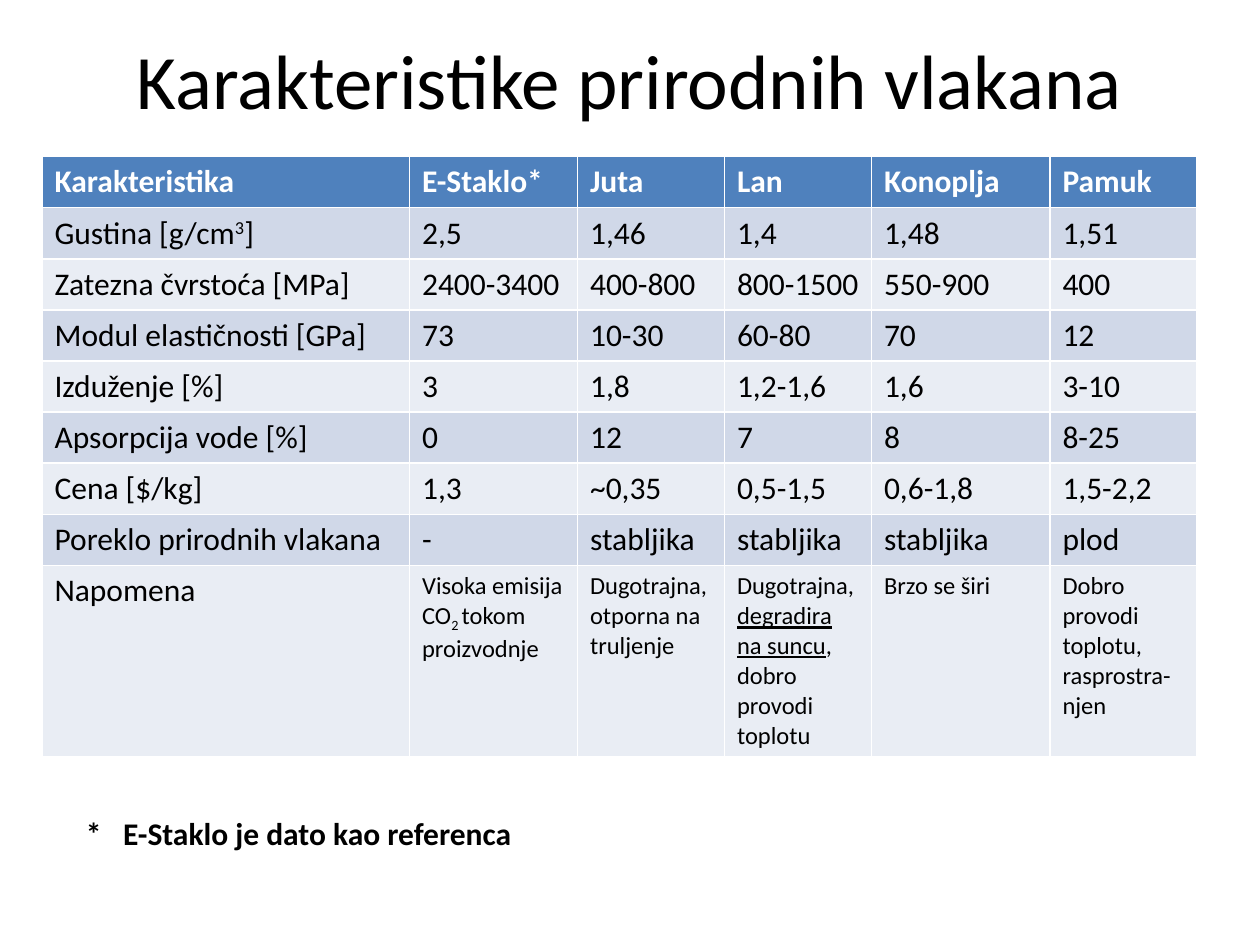
"""Build the slide on the characteristics of natural fibres."""
from pptx import Presentation
from pptx.dml import color
from pptx.enum import text
from pptx.util import Pt

COLUMN_WIDTHS = [210, 96, 84, 84, 102, 84]
ROW_HEIGHT, REMARK_HEIGHT = 29.2, 107.7
HEADINGS = ["Karakteristika", "E-Staklo*", "Juta", "Lan", "Konoplja", "Pamuk"]
PROPERTIES = [
    [[("Gustina [g/cm", {}), ("3", {"baseline": 30}), ("]", {})],
     "2,5", "1,46", "1,4", "1,48", "1,51"],
    ["Zatezna čvrstoća [MPa]", "2400-3400", "400-800", "800-1500", "550-900", "400"],
    ["Modul elastičnosti [GPa]", "73", "10-30", "60-80", "70", "12"],
    ["Izduženje [%]", "3", "1,8", "1,2-1,6", "1,6", "3-10"],
    ["Apsorpcija vode [%]", "0", "12", "7", "8", "8-25"],
    ["Cena [$/kg]", "1,3", "~0,35", "0,5-1,5", "0,6-1,8", "1,5-2,2"],
    ["Poreklo prirodnih vlakana", "-", "stabljika", "stabljika", "stabljika", "plod"],
]
REMARKS = [
    "Napomena",
    [("Visoka emisija CO", {}), ("2 ", {"baseline": -25}), ("tokom proizvodnje", {})],
    "Dugotrajna, otporna na truljenje",
    [("Dugotrajna, ", {}), ("degradira na suncu", {"underline": True}),
     (", dobro provodi toplotu", {})],
    "Brzo se širi",
    "Dobro provodi toplotu, rasprostra-njen",
]


def rgb(value):
    """Turn a hex string into a colour."""
    return color.RGBColor.from_string(value)


class FibreSlide:
    """Hold the style and the current slide."""

    BODY = {"name": "Calibri", "size": Pt(18), "bold": False}
    BOLD = BODY | {"bold": True}
    TITLE = BODY | {"size": Pt(44)}
    REMARK = BODY | {"size": Pt(14)}
    BLACK, WHITE, HEADER = "000000", "FFFFFF", "4F81BD"
    BANDS = ["D0D8E8", "E9EDF4"]

    def __init__(self, deck):
        """Add a slide with only a title placeholder."""
        self.slide = deck.slides.add_slide(deck.slide_layouts[5])

    def fill_text(self, frame, content, style, ink=BLACK):
        """Put a string or a list of formatted parts into a frame."""
        paragraph = frame.paragraphs[0]
        parts = [(content, {})] if isinstance(content, str) else content
        for wording, extras in parts:
            run = paragraph.add_run()
            run.text = wording
            run.font.color.rgb = rgb(ink)
            for key, value in (style | extras).items():
                if key == "baseline":
                    run._r.get_or_add_rPr().set(key, str(value * 1000))
                else:
                    setattr(run.font, key, value)
        return paragraph

    def title(self, wording, box):
        """Place and fill the title placeholder."""
        heading = self.slide.shapes.title
        for side, length in zip(("left", "top", "width", "height"), box):
            setattr(heading, side, Pt(length))
        heading.text_frame.vertical_anchor = text.MSO_ANCHOR.MIDDLE
        line = self.fill_text(heading.text_frame, wording, self.TITLE)
        line.alignment = text.PP_ALIGN.CENTER

    def table(self, rows, widths, heights, left, top):
        """Add the banded table of fibre properties."""
        box = map(Pt, (left, top, sum(widths), sum(heights)))
        grid = self.slide.shapes.add_table(len(rows), len(widths), *box).table
        for column, width in zip(grid.columns, widths):
            column.width = Pt(width)
        for r, (entries, height) in enumerate(zip(rows, heights)):
            grid.rows[r].height = Pt(height)
            for c, entry in enumerate(entries):
                cell = grid.cell(r, c)
                cell.fill.solid()
                cell.fill.fore_color.rgb = rgb(self.BANDS[(r - 1) % 2] if r else self.HEADER)
                if r == 0:
                    self.fill_text(cell.text_frame, entry, self.BOLD, self.WHITE)
                else:
                    is_remark = r == len(rows) - 1 and c > 0
                    self.fill_text(cell.text_frame, entry, self.REMARK if is_remark else self.BODY)

    def footnote(self, wording, box, indent):
        """Add a bold note with a hanging indent after its mark."""
        note = self.slide.shapes.add_textbox(*map(Pt, box))
        note.text_frame.word_wrap = True
        line = self.fill_text(note.text_frame, wording, self.BOLD)
        for key, length in {"marL": indent, "indent": -indent}.items():
            line._p.get_or_add_pPr().set(key, str(int(Pt(length))))


def main():
    """Build and save the slide."""
    deck = Presentation()
    deck.slide_width, deck.slide_height = Pt(720), Pt(540)
    fibres = FibreSlide(deck)
    fibres.title("Karakteristike prirodnih vlakana", (36, 0, 648, 90))
    rows = [HEADINGS, *PROPERTIES, REMARKS]
    heights = [ROW_HEIGHT] * (len(rows) - 1) + [REMARK_HEIGHT]
    fibres.table(rows, COLUMN_WIDTHS, heights, 24, 89.5)
    fibres.footnote("*\tE-Staklo je dato kao referenca", (42, 461.5, 642, 29), 21.3)
    deck.save("out.pptx")


if __name__ == "__main__":
    main()
